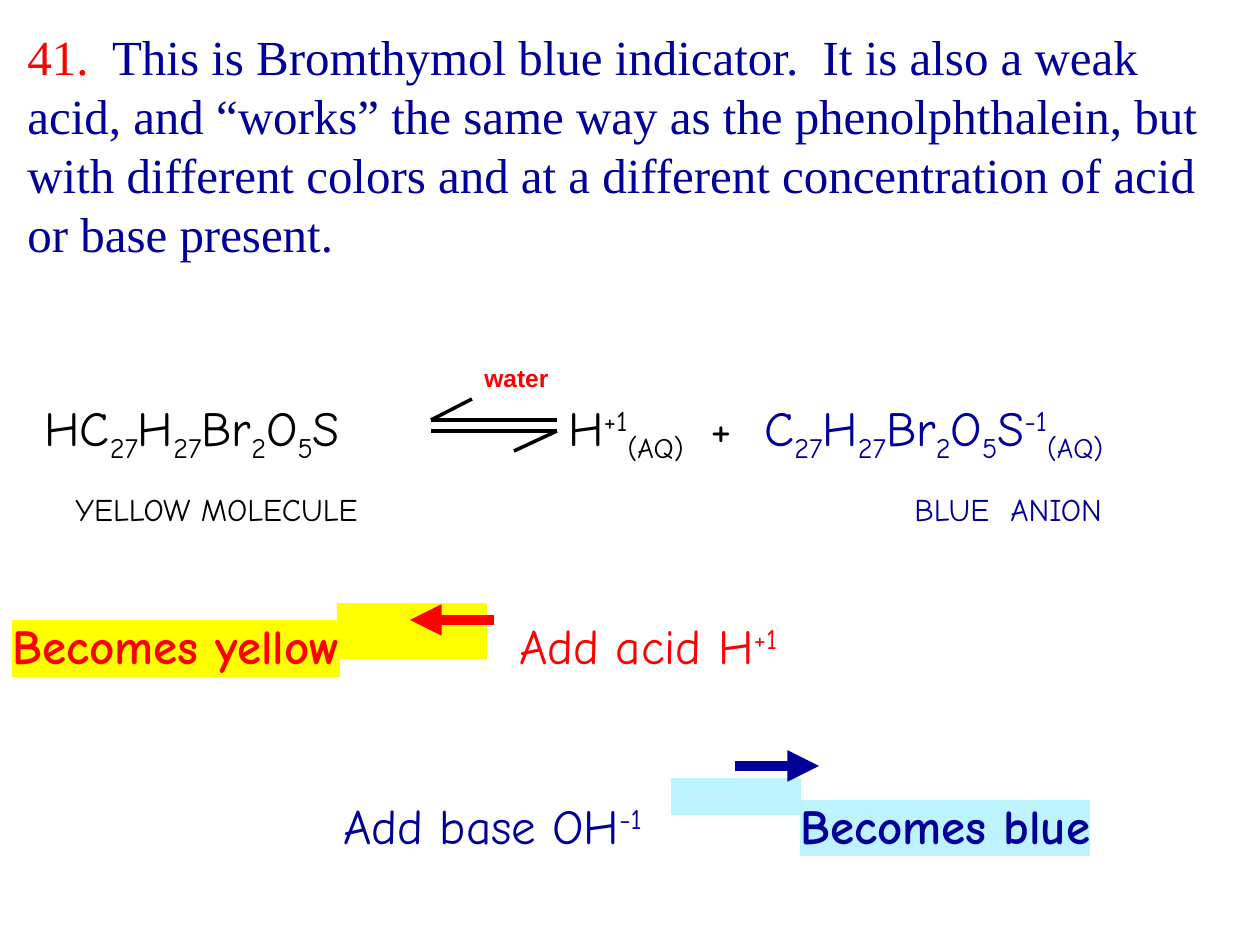
from lxml import etree
from pptx import Presentation
from pptx.dml.color import RGBColor
from pptx.enum.shapes import MSO_CONNECTOR, MSO_SHAPE
from pptx.oxml.ns import qn
from pptx.util import Pt

EMU_PER_PX = 914400 / 126
STRAIGHT = MSO_CONNECTOR.STRAIGHT
RECTANGLE = MSO_SHAPE.RECTANGLE
COLORS = {"black": "000000", "navy": "000099", "red": "FF0000",
          "yellow": "FFFF00", "pale": "BDF2FF"}
BASELINES = {"_": "-25000", "^": "30000"}
INSET = 12


def px(value):
    return round(value * EMU_PER_PX)


def rgb(name):
    return RGBColor.from_string(COLORS[name])


class SlideBuilder:
    def __init__(self, page, font):
        self.page = page
        self.font = font

    def band(self, left, top, width, height, color):
        shape = self.page.shapes.add_shape(
            RECTANGLE, px(left), px(top), px(width), px(height))
        shape.shadow.inherit = False
        shape.fill.solid()
        shape.fill.fore_color.rgb = rgb(color)
        shape.line.fill.background()

    def text(self, left, top, width, height, wrap=True, margin_top=6):
        box = self.page.shapes.add_textbox(px(left), px(top), px(width), px(height))
        frame = box.text_frame
        frame.word_wrap = wrap
        frame.margin_top = px(margin_top)
        return frame

    def paragraph(self, para, pieces, before=0, tabs=()):
        para.space_before = Pt(before)
        if tabs:
            stops = etree.SubElement(para._p.get_or_add_pPr(), qn("a:tabLst"))
            for stop in tabs:
                etree.SubElement(stops, qn("a:tab"), pos=str(px(stop - INSET)), algn="l")
        for words, style in pieces:
            for part in words.split("|"):
                self.span(para, part, **style)

    def span(self, para, words, color, size=28, bold=False, font=None, highlight=None):
        span = para.add_run()
        span.text = words.lstrip("_^")
        span.font.size = Pt(size)
        span.font.bold = bold
        span.font.name = font or self.font
        span.font.color.rgb = rgb(color)
        properties = span._r.get_or_add_rPr()
        if words[0] in BASELINES:
            properties.set("baseline", BASELINES[words[0]])
        if highlight:
            mark = etree.Element(qn("a:highlight"))
            etree.SubElement(mark, qn("a:srgbClr"), val=COLORS[highlight])
            properties.find(qn("a:solidFill")).addnext(mark)

    def line(self, start, end, color="black", weight=2, arrow=False):
        line = self.page.shapes.add_connector(
            STRAIGHT, *(px(value) for value in (*start, *end)))
        line.line.color.rgb = rgb(color)
        line.line.width = Pt(weight)
        if arrow:
            etree.SubElement(line.line._get_or_add_ln(), qn("a:tailEnd"), type="triangle")
        etree.SubElement(line._element.spPr, qn("a:effectLst"))


def main():
    deck = Presentation()
    deck.slide_width, deck.slide_height = px(1260), px(945)
    page = deck.slides.add_slide(deck.slide_layouts[6])
    builder = SlideBuilder(page, "Comic Neue")

    builder.band(337, 603, 150, 56, "yellow")
    builder.band(671, 778, 130, 37, "pale")

    black, navy, red = ({"color": name} for name in ("black", "navy", "red"))
    anion = "C|_27|H|_27|Br|_2|O|_5|S"
    rows = [
        ([("\tH" + anion + "|\tH|^+1|_(AQ)|\t+\t", black),
          (anion + "|^-1|_(AQ)", navy)], 0, (44, 568, 710, 764)),
        ([("\tYELLOW MOLECULE\t", {"color": "black", "size": 18}),
          ("BLUE  ANION", {"color": "navy", "size": 18})], 15, (75, 914)),
        ([("Becomes yellow", {"color": "red", "bold": True, "highlight": "yellow"}),
          ("\tAdd acid H|^+1", red)], 50, (519,)),
        ([("\tAdd base OH|^-1|\t", navy),
          ("Becomes blue", {"color": "navy", "bold": True, "highlight": "pale"})],
         69, (343, 800)),
    ]
    reactions = builder.text(0, 378, 1260, 485, margin_top=19)
    for index, (pieces, before, tabs) in enumerate(rows):
        para = reactions.add_paragraph() if index else reactions.paragraphs[0]
        builder.paragraph(para, pieces, before, tabs)

    for start, end in (((431, 420), (557, 420)), ((431, 431), (557, 431)),
                       ((431, 420), (472, 399)), ((514, 451), (557, 431))):
        builder.line(start, end)

    water = builder.text(472, 357, 90, 43, wrap=False)
    builder.paragraph(water.paragraphs[0], [
        ("water", {"color": "red", "size": 14, "bold": True, "font": "Arial"})])

    serif = "Times New Roman"
    question = builder.text(15, 21, 1228, 258)
    builder.paragraph(question.paragraphs[0], [
        ("41.", {"color": "red", "font": serif}),
        ("  This is Bromthymol blue indicator.  It is also a weak acid, and “works” "
         "the same way as the phenolphthalein, but with different colors and at a "
         "different concentration of acid or base present.",
         {"color": "navy", "font": serif})])

    builder.line((494, 620), (410, 620), "red", 6, arrow=True)
    builder.line((735, 766), (819, 766), "navy", 6, arrow=True)
    deck.save("out.pptx")


if __name__ == "__main__":
    main()
